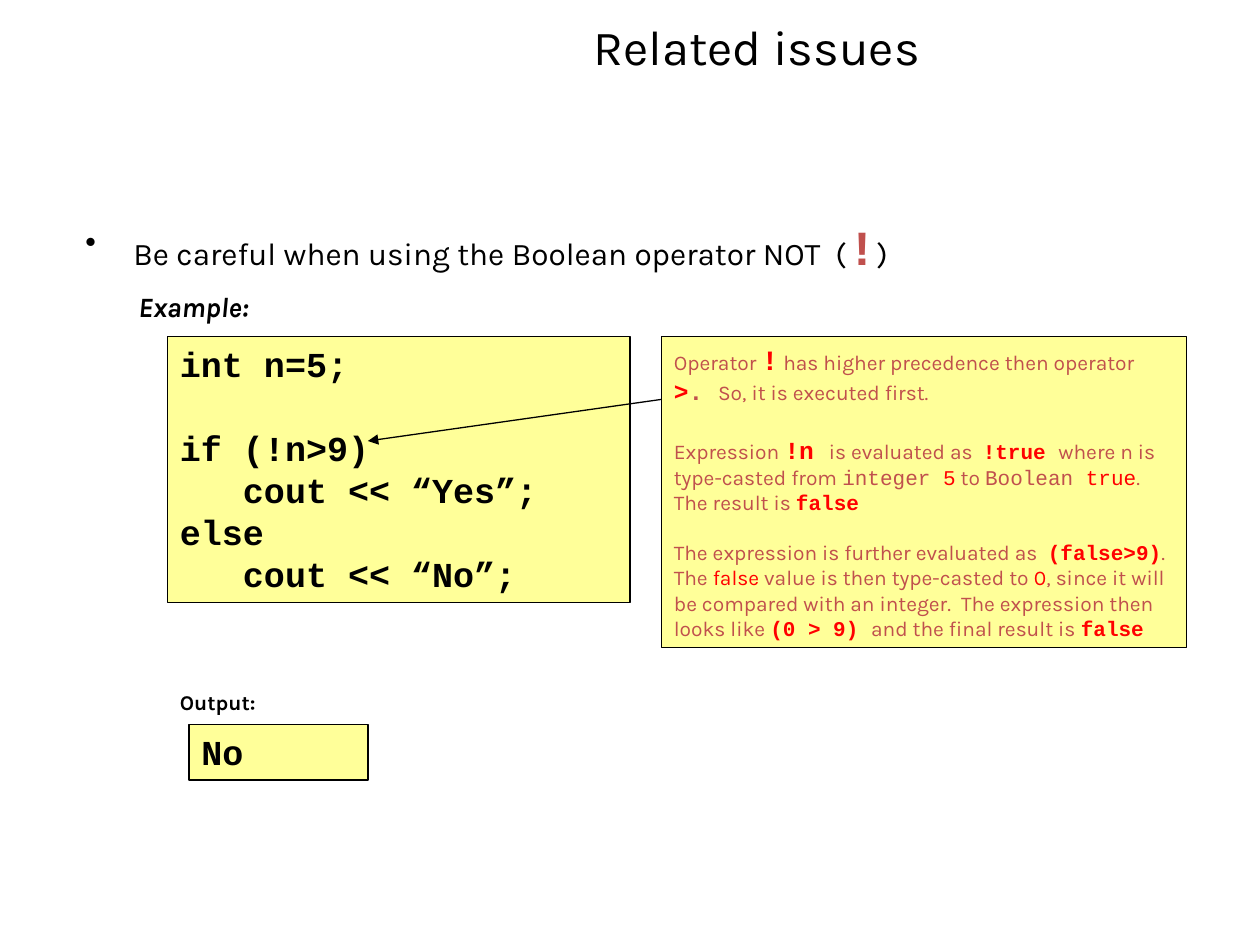
from lxml import etree
from pptx import Presentation
from pptx.dml.color import RGBColor
from pptx.enum.shapes import MSO_CONNECTOR, MSO_SHAPE
from pptx.enum.text import MSO_ANCHOR, MSO_AUTO_SIZE, PP_ALIGN
from pptx.oxml.ns import qn
from pptx.util import Inches, Pt

RECTANGLE = MSO_SHAPE.RECTANGLE
STRAIGHT = MSO_CONNECTOR.STRAIGHT
TOP = MSO_ANCHOR.TOP
GROW, FIXED = MSO_AUTO_SIZE.SHAPE_TO_FIT_TEXT, MSO_AUTO_SIZE.NONE
LEFT, CENTER = PP_ALIGN.LEFT, PP_ALIGN.CENTER
BLACK, WHITE, YELLOW, BRICK, RED = "000000", "FFFFFF", "FFFF99", "C0504D", "FF0000"
SANS, MONO = "Karla", "Courier New"


def rgb(value):
    return RGBColor.from_string(value)


def write(frame, paragraphs, align=LEFT, gaps=None):
    """Fill a frame with lists of (text, format) runs; gaps maps paragraph index to points before."""
    frame.vertical_anchor = TOP
    for index, runs in enumerate(paragraphs):
        para = frame.paragraphs[0] if index == 0 else frame.add_paragraph()
        para.alignment = align
        para.space_before = Pt((gaps or {}).get(index, 0))
        for text, style in runs:
            span = para.add_run()
            span.text = text
            span.font.color.rgb = rgb(style["color"])
            for name, value in style.items():
                if name != "color":
                    setattr(span.font, name, value)


# Text formats
title_style = {"name": SANS, "size": Pt(28), "color": BLACK}
point = {"name": SANS, "size": Pt(18), "color": BLACK}
point_mark = {"name": MONO, "size": Pt(28), "color": BRICK, "bold": True}
code = {"name": MONO, "size": Pt(20), "color": BLACK, "bold": True}
label = {"name": SANS, "size": Pt(12), "color": BLACK, "bold": True}
example_label = {**label, "size": Pt(16), "italic": True}
prose = {"name": SANS, "size": Pt(12), "color": BRICK}
prose_red = {**prose, "color": RED}
term = {**prose, "name": MONO}
term_red = {**term, "color": RED}
strong = {**term_red, "bold": True}
strong_14 = {**strong, "size": Pt(14)}
strong_16 = {**strong, "size": Pt(16)}

deck = Presentation()
deck.slide_width, deck.slide_height = Inches(10), Inches(7.5)
page = deck.slides.add_slide(deck.slide_layouts[5])

# Title
title = page.shapes.title
title.left, title.top = Inches(2.67), Inches(0.08)
title.width, title.height = Inches(6.67), Inches(0.83)
title.fill.solid()
title.fill.fore_color.rgb = rgb(WHITE)
title.text_frame.auto_size = FIXED
write(title.text_frame, [[("Related issues", title_style)]], CENTER)

# Main point with its bullet
bullet_box = page.shapes.add_shape(RECTANGLE, Inches(0.58), Inches(1.67), Inches(8.42), Inches(0.42))
bullet_box.shadow.inherit = False
bullet_box.fill.solid()
bullet_box.fill.fore_color.rgb = rgb(WHITE)
bullet_box.line.fill.background()
bullet_frame = bullet_box.text_frame
bullet_frame.word_wrap = True
bullet_properties = bullet_frame.paragraphs[0]._p.get_or_add_pPr()
bullet_properties.set("marL", str(Inches(0.38)))
bullet_properties.set("indent", str(-Inches(0.38)))
etree.SubElement(bullet_properties, qn("a:buChar")).set("char", "•")
write(bullet_frame, [[
    ("Be careful when using the Boolean operator NOT  (", point),
    ("!", point_mark),
    (")", point),
]])

# Labels
for text, style, left, top, width, height in [
    ("Example:", example_label, 1, 2.25, 1.19, 0.37),
    ("Output:", label, 1.33, 5.42, 0.81, 0.3),
]:
    box = page.shapes.add_textbox(Inches(left), Inches(top), Inches(width), Inches(height))
    box.text_frame.word_wrap = False
    box.text_frame.auto_size = FIXED
    write(box.text_frame, [[(text, style)]])

# Yellow boxes: code, explanation, output
code_lines = ["int n=5;", "if (!n>9)", "   cout << “Yes”;", "else", "   cout << “No”;"]
explanation = [
    [
        ("Operator ", prose), ("!", strong_16),
        (" has higher precedence then operator  ", prose), (">", strong_14),
        (". ", {**strong_14, "color": BRICK}), ("So, it is executed first.", prose),
    ],
    [
        ("Expression ", prose), ("!n ", strong_14), ("is evaluated as  ", prose),
        ("!true ", strong), ("where n is type-casted from ", prose),
        ("integer", term), (" 5", term_red), (" to ", prose),
        ("Boolean", term), (" true", term_red), (". The result is ", prose), ("false", strong),
    ],
    [
        ("The expression is further evaluated as  ", prose), ("(false>9)", strong), (".", prose),
    ],
    [
        ("The ", prose), ("false ", prose_red), ("value is then type-casted to ", prose),
        ("0", prose_red),
        (", since it will be compared with an integer.  The expression then looks like ", prose),
        ("(0 > 9) ", strong), ("and the final result is ", prose), ("false", strong),
    ],
]
for paragraphs, gaps, left, top, width, height in [
    ([[(line, code)] for line in code_lines], {1: 24}, 1.33, 2.67, 3.67, 2.11),
    (explanation, {1: 17, 2: 14}, 5.25, 2.67, 4.17, 2.47),
    ([[("No", code)]], {}, 1.5, 5.75, 1.42, 0.44),
]:
    box = page.shapes.add_shape(RECTANGLE, Inches(left), Inches(top), Inches(width), Inches(height))
    box.shadow.inherit = False
    box.fill.solid()
    box.fill.fore_color.rgb = rgb(YELLOW)
    box.line.color.rgb = rgb(BLACK)
    box.line.width = Pt(0.75)
    box.text_frame.word_wrap = True
    box.text_frame.margin_right = Inches(0.14)
    box.text_frame.auto_size = GROW
    write(box.text_frame, paragraphs, gaps=gaps)

# Arrow from the explanation to the condition
arrow = page.shapes.add_connector(STRAIGHT, Inches(5.25), Inches(3.17), Inches(2.92), Inches(3.5))
arrow.line.color.rgb = rgb(BLACK)
arrow.line.width = Pt(0.75)
etree.SubElement(arrow.line._get_or_add_ln(), qn("a:tailEnd")).set("type", "triangle")
etree.SubElement(arrow._element.spPr, qn("a:effectLst"))

deck.save("out.pptx")
